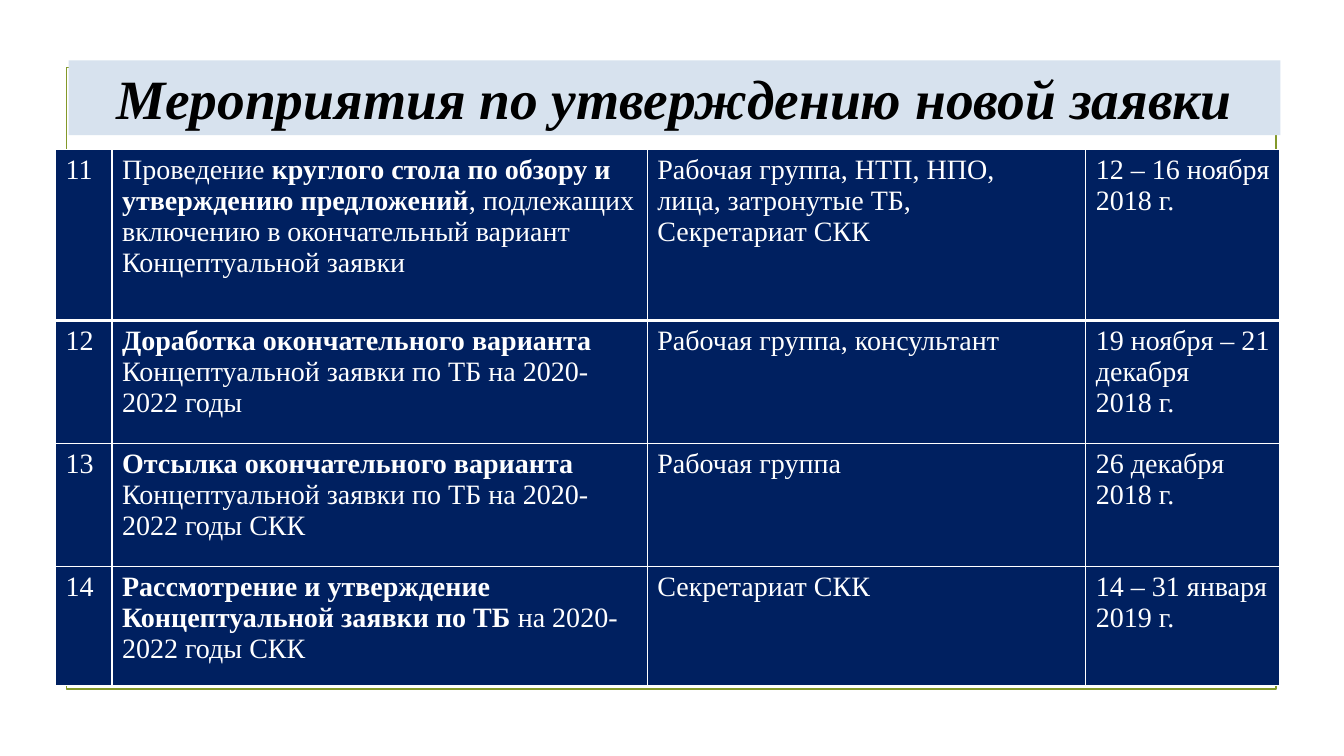
from dataclasses import dataclass

from lxml.etree import SubElement
from pptx import Presentation
from pptx.dml.color import RGBColor
from pptx.enum.shapes import MSO_SHAPE
from pptx.enum.text import MSO_ANCHOR, MSO_AUTO_SIZE, PP_ALIGN
from pptx.oxml.ns import qn
from pptx.util import Inches, Pt

WIDTH, HEIGHT = Inches(13.33), Inches(7.5)


@dataclass(frozen=True)
class Theme:
    """Colours, font and sizes of the slide."""
    font: str = "Times New Roman"
    frame: str = "83992A"
    band: str = "D7E2EE"
    cell: str = "002060"
    light: str = "FFFFFF"
    dark: str = "000000"
    title_size: float = 39.6
    cell_size: float = 20
    frame_line: float = 1.25
    thin: float = 1
    thick: float = 3


THEME = Theme()
TITLE = "Мероприятия по утверждению новой заявки"
FRAME_BOX = (4.95, 8.93, 90.02, 82.27)
TITLE_BOX = (5.1, 8, 90.17, 9.87)
TABLE_BOX = (4.13, 19.73, 91.1, 70.94)
COLUMN_SHARES = (4.2, 39.83, 32.63, 14.44)
ROW_SHARES = (22.67, 16.27, 16.27, 15.73)
STEPS = (
    ("11",
     "Проведение *круглого стола по обзору и утверждению предложений*, "
     "подлежащих включению в окончательный вариант Концептуальной заявки",
     "Рабочая группа, НТП, НПО,\nлица, затронутые ТБ,\nСекретариат СКК",
     "12 – 16 ноября 2018 г."),
    ("12",
     "*Доработка окончательного варианта *Концептуальной заявки по ТБ на 2020-2022 годы",
     "Рабочая группа, консультант",
     "19 ноября – 21 декабря\n2018 г."),
    ("13",
     "*Отсылка окончательного варианта *Концептуальной заявки по ТБ на 2020-2022 годы СКК",
     "Рабочая группа",
     "26 декабря 2018 г."),
    ("14",
     "*Рассмотрение и утверждение Концептуальной заявки по ТБ *на 2020-2022 годы СКК",
     "Секретариат СКК",
     "14 – 31 января 2019 г."),
)


def across(share):
    """Turn a percentage of the slide width into a length."""
    return round(WIDTH * share / 100)


def down(share):
    """Turn a percentage of the slide height into a length."""
    return round(HEIGHT * share / 100)


def place(box):
    """Turn percentages into left, top, width and height."""
    left, top, width, height = box
    return across(left), down(top), across(width), down(height)


def apply(target, values):
    """Set every attribute named in the dict."""
    for name, value in values.items():
        setattr(target, name, value)


def paint(fill, color):
    """Give a fill one solid colour."""
    fill.solid()
    fill.fore_color.rgb = RGBColor.from_string(color)


def write_run(paragraph, text, size, color, bold=False, italic=False):
    """Add a formatted run to the paragraph."""
    run = paragraph.add_run()
    run.text = text
    apply(run.font, {"name": THEME.font, "size": Pt(size), "bold": bold, "italic": italic})
    run.font.color.rgb = RGBColor.from_string(color)


def add_title(slide):
    """Format and fill the title placeholder."""
    title = slide.shapes.title
    apply(title, dict(zip(("left", "top", "width", "height"), place(TITLE_BOX))))
    paint(title.fill, THEME.band)
    apply(title.text_frame, {"word_wrap": True, "auto_size": MSO_AUTO_SIZE.NONE,
                             "vertical_anchor": MSO_ANCHOR.MIDDLE})
    paragraph = title.text_frame.paragraphs[0]
    paragraph.alignment = PP_ALIGN.CENTER
    write_run(paragraph, TITLE, THEME.title_size, THEME.dark, bold=True, italic=True)


def add_frame(slide):
    """Draw the outline frame behind the title."""
    frame = slide.shapes.add_shape(MSO_SHAPE.RECTANGLE, *place(FRAME_BOX))
    frame.shadow.inherit = False
    frame.fill.background()
    frame.line.color.rgb = RGBColor.from_string(THEME.frame)
    frame.line.width = Pt(THEME.frame_line)
    slide.shapes.title.element.addprevious(frame.element)


def add_borders(cell, top, bottom):
    """Draw the four cell borders with the given top and bottom widths."""
    properties = cell._tc.get_or_add_tcPr()
    widths = {"a:lnL": THEME.thin, "a:lnR": THEME.thin, "a:lnT": top, "a:lnB": bottom}
    for tag, width in widths.items():
        line = SubElement(properties, qn(tag), w=str(Pt(width)))
        SubElement(SubElement(line, qn("a:solidFill")), qn("a:srgbClr"), val=THEME.light)


def fill_cell(cell, text):
    """Write lines into a cell, with starred parts in bold."""
    paint(cell.fill, THEME.cell)
    frame = cell.text_frame
    for number, line in enumerate(text.split("\n")):
        paragraph = frame.add_paragraph() if number else frame.paragraphs[0]
        for index, part in enumerate(line.split("*")):
            if part:
                write_run(paragraph, part, THEME.cell_size, THEME.light, bold=index % 2 == 1)


def add_steps(slide):
    """Add the table of steps."""
    table = slide.shapes.add_table(len(STEPS), len(COLUMN_SHARES), *place(TABLE_BOX)).table
    apply(table, {"first_row": False, "horz_banding": False})
    for column, share in zip(table.columns, COLUMN_SHARES):
        column.width = across(share)
    for row, share in zip(table.rows, ROW_SHARES):
        row.height = down(share)
    for row_index, step in enumerate(STEPS):
        top = THEME.thick if row_index == 1 else THEME.thin
        bottom = THEME.thick if row_index == 0 else THEME.thin
        for column_index, text in enumerate(step):
            cell = table.cell(row_index, column_index)
            add_borders(cell, top, bottom)
            fill_cell(cell, text)


def main():
    """Build and save the slide."""
    presentation = Presentation()
    apply(presentation, {"slide_width": WIDTH, "slide_height": HEIGHT})
    slide = presentation.slides.add_slide(presentation.slide_layouts.get_by_name("Title Only"))
    add_title(slide)
    add_frame(slide)
    add_steps(slide)
    presentation.save("out.pptx")


if __name__ == "__main__":
    main()
